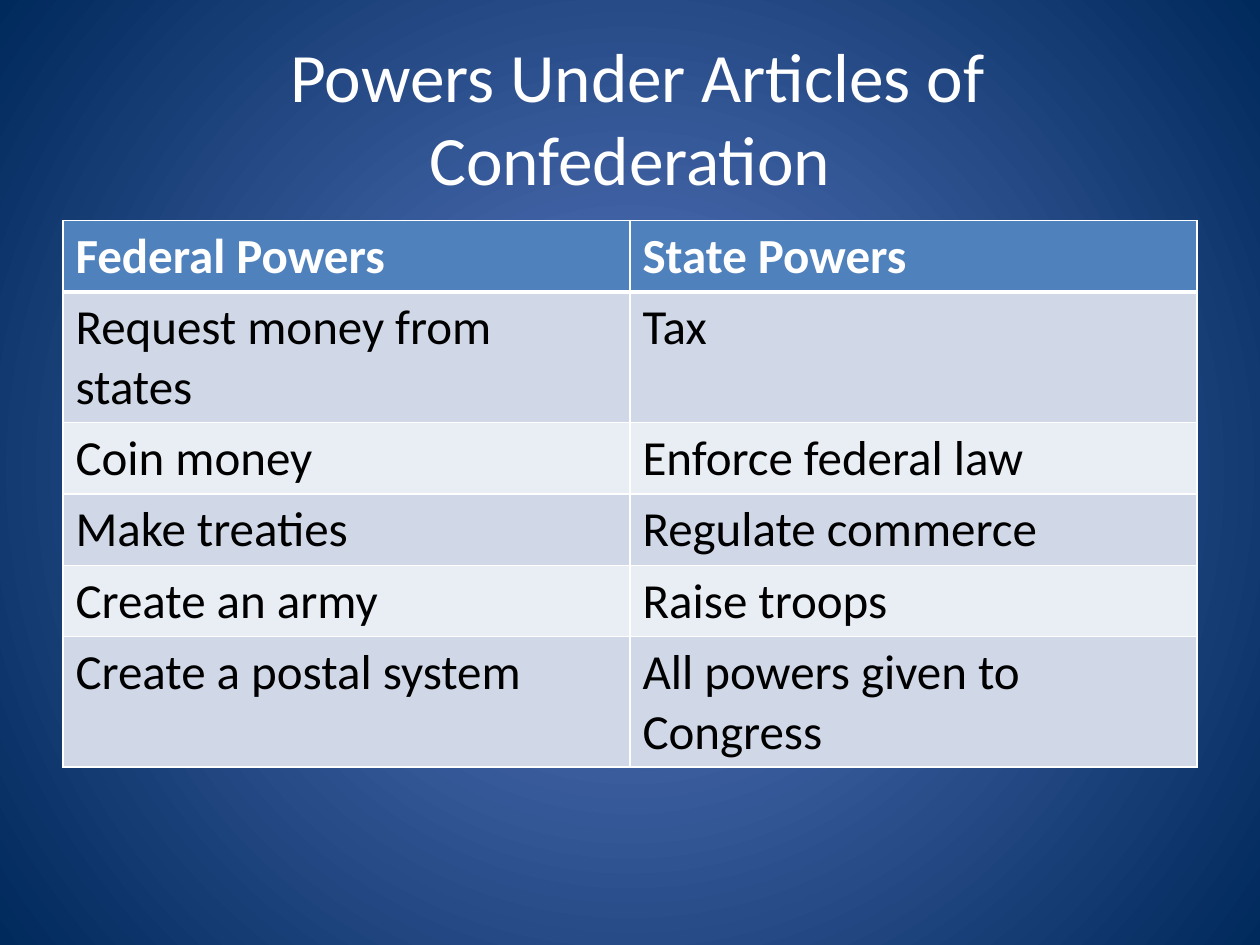
from typing import NamedTuple

from lxml import etree
from pptx import Presentation
from pptx.dml.color import RGBColor
from pptx.enum.text import MSO_ANCHOR, PP_ALIGN
from pptx.oxml.ns import qn
from pptx.util import Inches, Pt

CENTER = PP_ALIGN.CENTER
MIDDLE = MSO_ANCHOR.MIDDLE

WHITE = RGBColor(0xFF, 0xFF, 0xFF)
BLACK = RGBColor(0x00, 0x00, 0x00)
GLOW_BLUE = RGBColor(0x5E, 0x7C, 0xC5)
NAVY = RGBColor(0x00, 0x29, 0x5C)
HEADER_BLUE = RGBColor(0x4F, 0x81, 0xBD)
BANDS = (RGBColor(0xD0, 0xD8, 0xE8), RGBColor(0xE9, 0xED, 0xF4))

FONT = "Calibri"
PAGE_WIDTH, PAGE_HEIGHT = Inches(10), Inches(7.5)
MARGIN = int(PAGE_WIDTH * 0.05)
CONTENT_WIDTH = PAGE_WIDTH - 2 * MARGIN
TITLE_TOP, TITLE_HEIGHT = Inches(0.3), Inches(1.25)
TABLE_TOP, TABLE_HEIGHT = Inches(1.75), Inches(4.33)
ROW_HEIGHT = Inches(0.41)
THIN, THICK = Pt(1), Pt(3)


class PowerRow(NamedTuple):
    federal: str
    state: str


POWERS = (
    PowerRow("Federal Powers", "State Powers"),
    PowerRow("Request money from states", "Tax"),
    PowerRow("Coin money", "Enforce federal law"),
    PowerRow("Make treaties", "Regulate commerce"),
    PowerRow("Create an army", "Raise troops"),
    PowerRow("Create a postal system", "All powers given to Congress"),
)


def paint_background(page) -> None:
    """Fill the page with a gradient that radiates from its middle."""
    fill = page.background.fill
    fill.gradient()
    for stop, color in zip(fill.gradient_stops, (GLOW_BLUE, NAVY)):
        stop.color.rgb = color
    gradient = page.element.find(".//" + qn("a:gradFill"))
    gradient.remove(gradient.find(qn("a:lin")))
    circle = etree.SubElement(gradient, qn("a:path"), path="circle")
    etree.SubElement(circle, qn("a:fillToRect"),
                     l="50000", t="50000", r="50000", b="50000")


def style_paragraph(para, size: float, color: RGBColor, bold: bool = False) -> None:
    para.font.name = FONT
    para.font.size = Pt(size)
    para.font.color.rgb = color
    para.font.bold = bold


def add_title(page, text: str) -> None:
    box = page.shapes.add_textbox(MARGIN, TITLE_TOP, CONTENT_WIDTH, TITLE_HEIGHT)
    frame = box.text_frame
    frame.word_wrap = True
    frame.vertical_anchor = MIDDLE
    para = frame.paragraphs[0]
    para.text = text
    para.alignment = CENTER
    style_paragraph(para, 39.6, WHITE)


def add_borders(cell, top: int, bottom: int) -> None:
    properties = cell._tc.get_or_add_tcPr()
    widths = {"a:lnL": THIN, "a:lnR": THIN, "a:lnT": top, "a:lnB": bottom}
    for tag, width in widths.items():
        line = etree.SubElement(properties, qn(tag), w=str(int(width)))
        fill = etree.SubElement(line, qn("a:solidFill"))
        etree.SubElement(fill, qn("a:srgbClr"), val=str(WHITE))


def add_powers_table(page, powers: tuple[PowerRow, ...]) -> None:
    table = page.shapes.add_table(
        len(powers), len(PowerRow._fields),
        MARGIN, TABLE_TOP, CONTENT_WIDTH, TABLE_HEIGHT).table
    for index, power in enumerate(powers):
        table.rows[index].height = ROW_HEIGHT
        header = index == 0
        for cell, text in zip(table.rows[index].cells, power):
            add_borders(cell, top=THICK if index == 1 else THIN,
                        bottom=THICK if header else THIN)
            cell.fill.solid()
            cell.fill.fore_color.rgb = HEADER_BLUE if header else BANDS[(index - 1) % 2]
            cell.text = text
            style_paragraph(cell.text_frame.paragraphs[0], 28,
                            WHITE if header else BLACK, bold=header)


def main() -> None:
    deck = Presentation()
    deck.slide_width, deck.slide_height = PAGE_WIDTH, PAGE_HEIGHT
    page = deck.slides.add_slide(deck.slide_layouts[6])
    paint_background(page)
    add_title(page, " Powers Under Articles of Confederation")
    add_powers_table(page, POWERS)
    deck.save("out.pptx")


if __name__ == "__main__":
    main()
